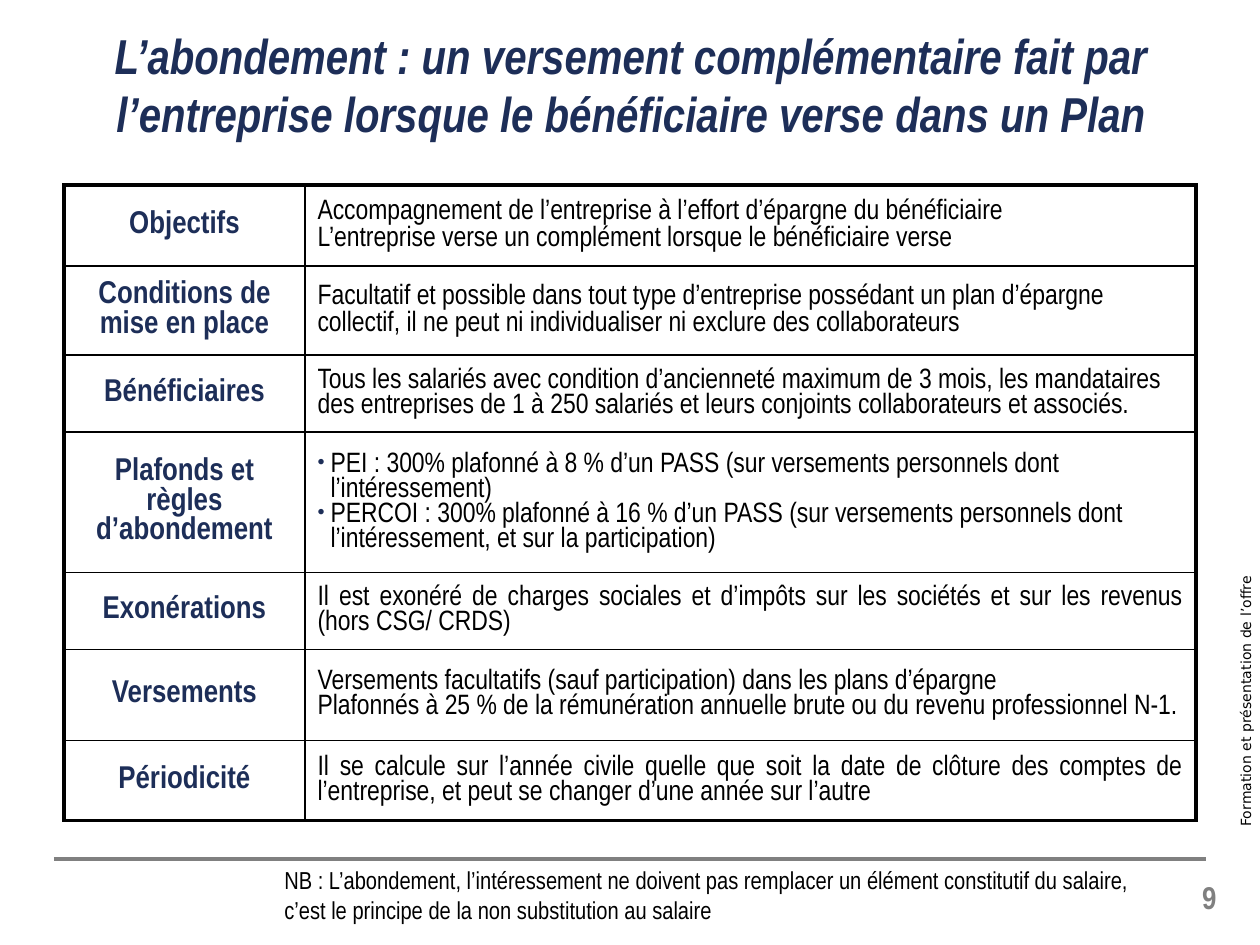
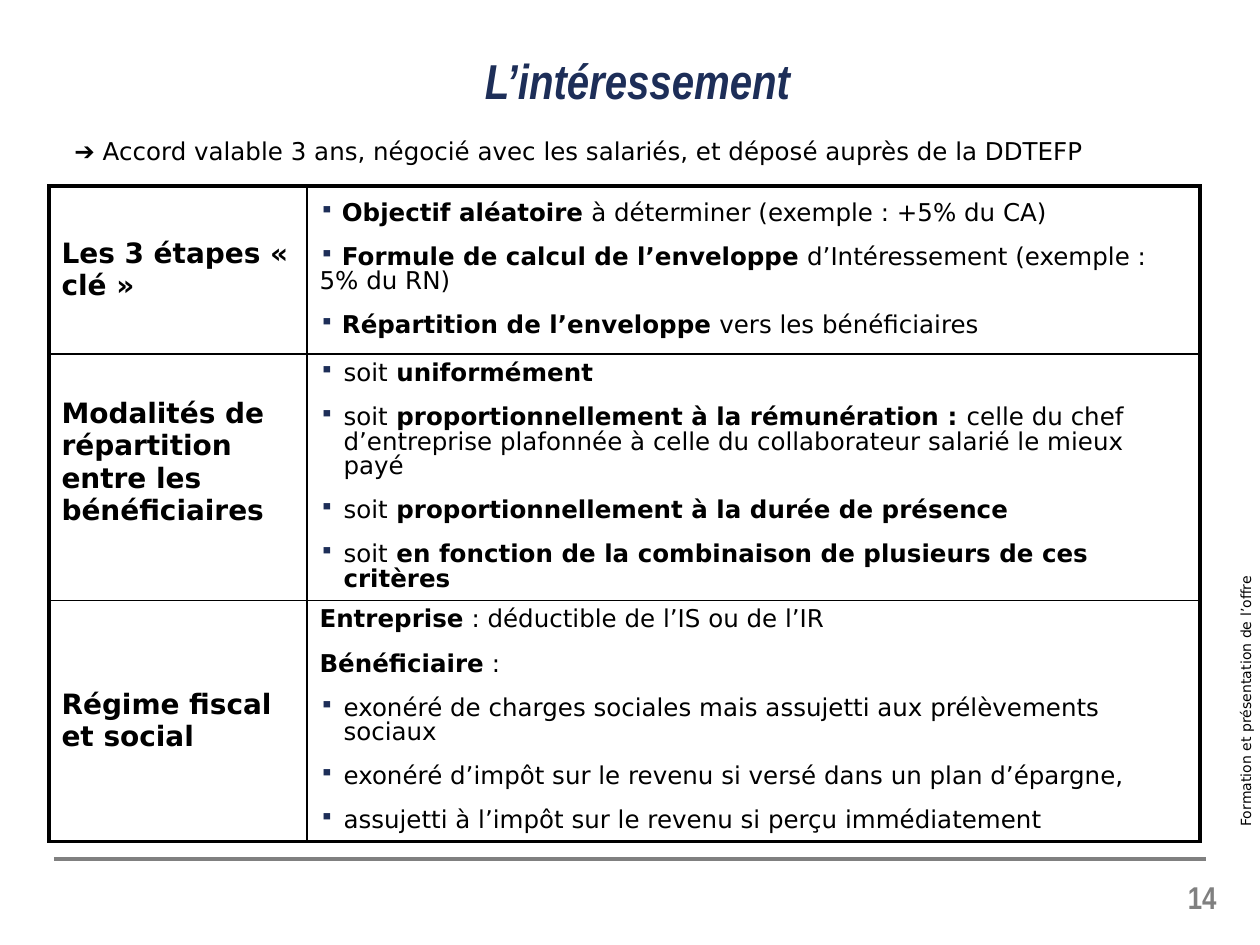
from lxml import etree
from pptx import Presentation
from pptx import util as u
from pptx.dml.color import RGBColor
from pptx.enum import shapes, text
from pptx.oxml import ns

SCALE = 914400 / 126  # EMU per px
NAVY, BLACK, GREY, WHITE = "1D2E58", "000000", "808080", "FFFFFF"
NARROW, SANS = "Arial Narrow", "DejaVu Sans"
THIN, THICK = 1, 2.25
LEFT, CENTER = text.PP_ALIGN.LEFT, text.PP_ALIGN.CENTER
RIGHT, JUSTIFY = text.PP_ALIGN.RIGHT, text.PP_ALIGN.JUSTIFY
MIDDLE, TOP = text.MSO_ANCHOR.MIDDLE, text.MSO_ANCHOR.TOP


def px(length):
    return u.Emu(round(length * SCALE))


def color(value):
    return RGBColor.from_string(value)


def add_child(parent, tag, **attributes):
    child = etree.SubElement(parent, ns.qn(tag))
    for name, value in attributes.items():
        child.set(name, str(value))
    return child


def set_bullet(paragraph, character, size, indent):
    properties = paragraph._p.get_or_add_pPr()
    properties.set("marL", str(px(indent)))
    properties.set("indent", str(-px(indent)))
    if character:
        add_child(add_child(properties, "a:buClr"), "a:srgbClr", val=NAVY)
        add_child(properties, "a:buSzPct", val=size * 1000)
        add_child(properties, "a:buChar", char=character)


def write(frame, content, font=NARROW, size=16, ink=BLACK, bold=False, italic=False,
          align=LEFT, spacing=None, before=0, after=0, bullet="", bullet_size=80, indent=0):
    """Fill a frame with paragraphs; **marks** switch bold, a leading bullet mark makes a list item."""
    lines = [content] if isinstance(content, str) else content
    for number, line in enumerate(lines):
        paragraph = frame.paragraphs[0] if number == 0 else frame.add_paragraph()
        listed = bool(bullet) and line.startswith(bullet)
        if listed:
            line = line[len(bullet):]
        if listed or indent:
            set_bullet(paragraph, bullet if listed else "", bullet_size, indent)
        paragraph.alignment = align
        if spacing:
            paragraph.line_spacing = spacing
        if before and number:
            paragraph.space_before = u.Pt(before)
        if after:
            paragraph.space_after = u.Pt(after)
        for position, part in enumerate(line.split("**")):
            if part:
                run = paragraph.add_run()
                run.text = part
                run.font.name, run.font.size = font, u.Pt(size)
                run.font.bold, run.font.italic = bold or position % 2 == 1, italic
                run.font.color.rgb = color(ink)


def set_borders(cell, **widths):
    properties = cell._tc.get_or_add_tcPr()
    for index, side in enumerate(("L", "R", "T", "B")):
        line = etree.Element(ns.qn(f"a:ln{side}"), w=str(u.Pt(widths[side])))
        add_child(add_child(line, "a:solidFill"), "a:srgbClr", val=BLACK)
        properties.insert(index, line)


class Deck:
    def __init__(self):
        self.presentation = Presentation()
        self.presentation.slide_width = px(1260)
        self.presentation.slide_height = px(945)
        self.slide = None

    def new_slide(self, number, title, title_box):
        self.slide = self.presentation.slides.add_slide(self.presentation.slide_layouts[6])
        # Footer rule, side caption and page number
        self.rule(54, 859, 1206, 859)
        self.text_box((1052, 631, 387, 29), "Formation et présentation de l’offre",
                      rotation=270, font=SANS, size=8)
        self.text_box((1155, 872, 74, 63), str(number), size=18, ink=GREY, bold=True, align=RIGHT)
        self.text_box(title_box, title, anchor=MIDDLE, size=28, ink=NAVY,
                      bold=True, italic=True, align=CENTER)

    def rule(self, x1, y1, x2, y2):
        line = self.slide.shapes.add_connector(
            shapes.MSO_CONNECTOR.STRAIGHT, px(x1), px(y1), px(x2), px(y2))
        line.line.color.rgb = color(GREY)
        line.line.width = u.Pt(1.75)
        add_child(line._element.spPr, "a:effectLst")

    def text_box(self, box, content, anchor=TOP, rotation=0, **style):
        shape = self.slide.shapes.add_textbox(*map(px, box))
        shape.rotation = rotation
        shape.text_frame.word_wrap = True
        shape.text_frame.vertical_anchor = anchor
        write(shape.text_frame, content, **style)

    def table(self, left, top, columns, rows, label_style):
        """Each row is (height, label, content, content style)."""
        heights = [row[0] for row in rows]
        table = self.slide.shapes.add_table(
            len(rows), 2, px(left), px(top), px(sum(columns)), px(sum(heights))).table
        table.first_row = table.horz_banding = False
        for column, width in zip(table.columns, columns):
            column.width = px(width)
        last = len(rows) - 1
        for index, (height, label, content, style) in enumerate(rows):
            table.rows[index].height = px(height)
            for side, (words, look) in enumerate(((label, label_style), (content, style))):
                cell = table.cell(index, side)
                cell.vertical_anchor = MIDDLE
                cell.fill.solid()
                cell.fill.fore_color.rgb = color(WHITE)
                write(cell.text_frame, words, **look)
                set_borders(cell, L=THIN if side else THICK, R=THICK if side else THIN,
                            T=THIN if index else THICK, B=THICK if index == last else THIN)
        return table


def build_abondement(deck):
    deck.new_slide(9, "L’abondement : un versement complémentaire fait par l’entreprise "
                   "lorsque le bénéficiaire verse dans un Plan", (35, 16, 1191, 136))
    deck.text_box((272, 859, 897, 72), "NB : L’abondement, l’intéressement ne doivent pas remplacer "
                  "un élément constitutif du salaire, c’est le principe de la non substitution "
                  "au salaire", size=14)
    loose = dict(align=JUSTIFY, after=0.8)
    tight = dict(spacing=0.95)
    justified = dict(tight, align=JUSTIFY)
    listed = dict(tight, bullet="•", bullet_size=75, indent=13)
    rows = [
        (81, "Objectifs",
         ["Accompagnement de l’entreprise à l’effort d’épargne du bénéficiaire",
          "L’entreprise verse un complément lorsque le bénéficiaire verse"], loose),
        (89, "Conditions de mise en place",
         ["Facultatif et possible dans tout type d’entreprise possédant un plan d’épargne",
          "collectif, il ne peut ni individualiser ni exclure des collaborateurs"], loose),
        (77, "Bénéficiaires",
         "Tous les salariés avec condition d’ancienneté maximum de 3 mois, les mandataires des "
         "entreprises de 1 à 250 salariés et leurs conjoints collaborateurs et associés.", tight),
        (140, "Plafonds et règles d’abondement",
         ["•PEI : 300% plafonné à 8 % d’un PASS (sur versements personnels dont l’intéressement)",
          "•PERCOI : 300% plafonné à 16 % d’un PASS (sur versements personnels dont "
          "l’intéressement, et sur la participation)"], listed),
        (77, "Exonérations",
         "Il est exonéré de charges sociales et d’impôts sur les sociétés et sur les revenus "
         "(hors CSG/ CRDS)", justified),
        (91, "Versements",
         ["Versements facultatifs (sauf participation) dans les plans d’épargne",
          "Plafonnés à 25 % de la rémunération annuelle brute ou du revenu professionnel N-1."],
         justified),
        (80, "Périodicité",
         "Il se calcule sur l’année civile quelle que soit la date de clôture des comptes de "
         "l’entreprise, et peut se changer d’une année sur l’autre", justified),
    ]
    deck.table(64, 185, (241, 891), rows, dict(size=18, ink=NAVY, bold=True, align=CENTER))


def build_interessement(deck):
    deck.new_slide(14, "L’intéressement", (102, 39, 1071, 82))
    inline = dict(font=SANS, size=14, spacing=0.85, before=11.2, bullet="▪")
    hanging = dict(inline, indent=24)
    rows = [
        (168, "Les 3 étapes « clé »",
         ["▪ **Objectif aléatoire** à déterminer (exemple : +5% du CA)",
          "▪ **Formule de calcul de l’enveloppe** d’Intéressement (exemple : 5% du RN)",
          "▪ **Répartition de l’enveloppe** vers les bénéficiaires"], inline),
        (243, "Modalités de répartition entre les bénéficiaires",
         ["▪soit** uniformément**",
          "▪soit** proportionnellement à la rémunération : **celle du chef d’entreprise "
          "plafonnée à celle du collaborateur salarié le mieux payé",
          "▪soit** proportionnellement à la durée de présence**",
          "▪soit** en fonction de la combinaison de plusieurs de ces critères**"], hanging),
        (239, "Régime fiscal et social",
         ["**Entreprise** : déductible de l’IS ou de l’IR",
          "**Bénéficiaire** :",
          "▪exonéré de charges sociales mais assujetti aux prélèvements sociaux",
          "▪exonéré d’impôt sur le revenu si versé dans un plan d’épargne,",
          "▪assujetti à l’impôt sur le revenu si perçu immédiatement"], hanging),
    ]
    table = deck.table(49, 186, (258, 893), rows, dict(font=SANS, size=16, bold=True))
    # The second label sits a little above the middle of its row
    table.cell(1, 0).margin_bottom = px(36)
    deck.text_box((62, 130, 1105, 42), "➔ Accord valable 3 ans, négocié avec les salariés, "
                  "et déposé auprès de la DDTEFP", font=SANS, size=14)


def main():
    deck = Deck()
    build_abondement(deck)
    build_interessement(deck)
    deck.presentation.save("out.pptx")


if __name__ == "__main__":
    main()
